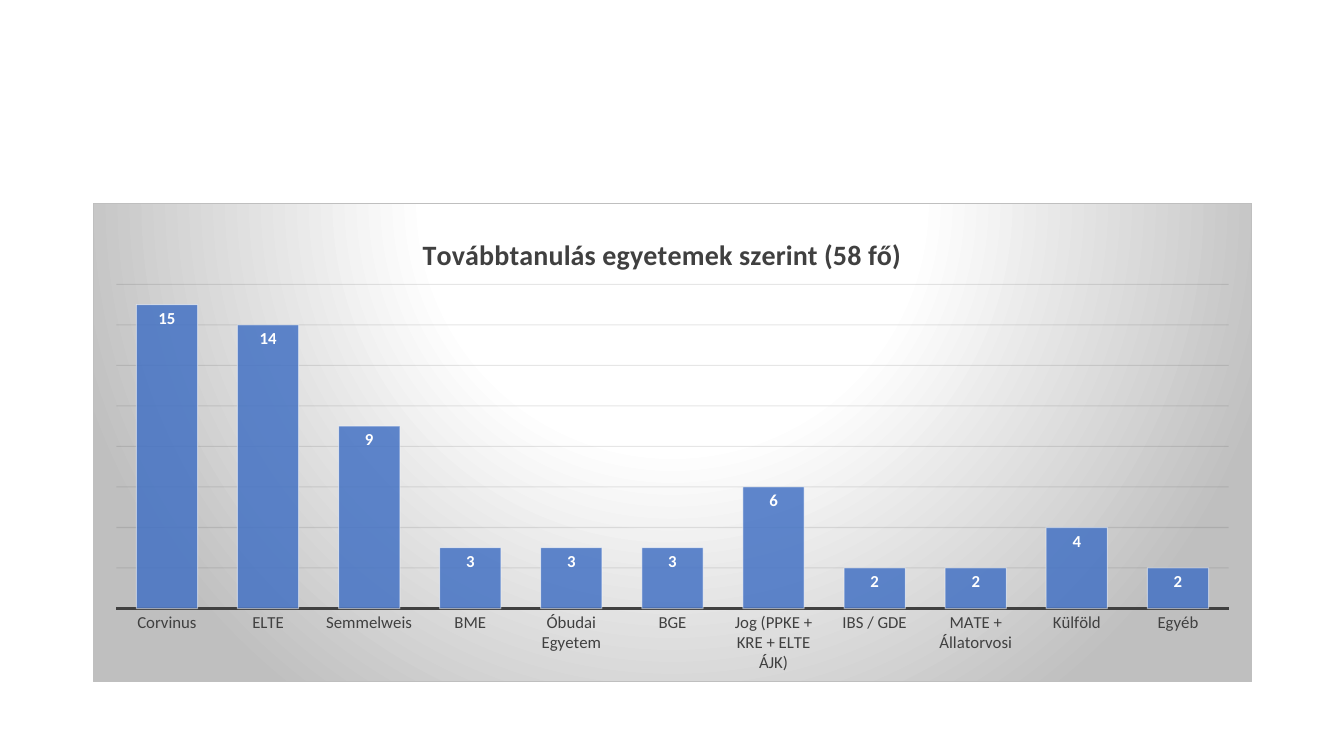
from lxml import etree
from pptx import Presentation
from pptx.chart.data import CategoryChartData
from pptx.dml.color import RGBColor
from pptx.enum.chart import XL_CHART_TYPE, XL_LABEL_POSITION, XL_TICK_MARK
from pptx.oxml import parse_xml
from pptx.oxml.ns import nsdecls, qn
from pptx.util import Inches, Pt

TITLE = "Továbbtanulás egyetemek szerint (58 fő)"
STUDENTS = {
    "Corvinus": 15,
    "ELTE": 14,
    "Semmelweis": 9,
    "BME": 3,
    "Óbudai Egyetem": 3,
    "BGE": 3,
    "Jog (PPKE + KRE + ELTE ÁJK)": 6,
    "IBS / GDE": 2,
    "MATE + Állatorvosi": 2,
    "Külföld": 4,
    "Egyéb": 2,
}

FONT = "Calibri"
BLACK = RGBColor(0x00, 0x00, 0x00)
WHITE = RGBColor(0xFF, 0xFF, 0xFF)
DARK_GRAY = RGBColor(0x40, 0x40, 0x40)
GRID = RGBColor(0x0D, 0x0D, 0x0D)
SILVER = RGBColor(0xBF, 0xBF, 0xBF)
BLUE = RGBColor(0x44, 0x72, 0xC4)
COLUMN = XL_CHART_TYPE.COLUMN_CLUSTERED
INSIDE_END = XL_LABEL_POSITION.INSIDE_END
NO_TICK = XL_TICK_MARK.NONE


def style_font(font, size, color, bold=False):
    font.name = FONT
    font.size = Pt(size)
    font.bold = bold
    font.color.rgb = color


def style_line(line, color, width):
    line.color.rgb = color
    line.width = Pt(width)


def set_opacity(fill, percent):
    """Make a solid fill or line colour partly transparent."""
    color = fill._xPr.find(qn("a:solidFill"))[0]
    etree.SubElement(color, qn("a:alpha"), val=str(percent * 1000))


def set_layout(parent, index, **settings):
    """Place a chart part by fractions of the chart's size."""
    for layout in parent.findall(qn("c:layout")):
        parent.remove(layout)
    layout = parent.makeelement(qn("c:layout"))
    manual = etree.SubElement(layout, qn("c:manualLayout"))
    for name, value in settings.items():
        etree.SubElement(manual, qn("c:" + name), val=str(value))
    parent.insert(index, layout)


def set_background(chart):
    """Give the chart area a radial gradient and a thin border."""
    stops = "".join(
        f'<a:gs pos="{position * 1000}"><a:srgbClr val="{color}"/></a:gs>'
        for position, color in ((0, WHITE), (39, WHITE), (100, SILVER)))
    chart._chartSpace.find(qn("c:chart")).addnext(parse_xml(
        f'<c:spPr {nsdecls("c", "a")}>'
        f'<a:gradFill><a:gsLst>{stops}</a:gsLst><a:path path="circle">'
        '<a:fillToRect l="50000" t="-80000" r="50000" b="180000"/></a:path></a:gradFill>'
        f'<a:ln w="{Pt(0.75)}"><a:solidFill><a:srgbClr val="{SILVER}"/></a:solidFill></a:ln>'
        '</c:spPr>'))


presentation = Presentation()
presentation.slide_width = Inches(13.33)
presentation.slide_height = Inches(7.5)
slide = presentation.slides.add_slide(presentation.slide_layouts[6])

chart_data = CategoryChartData()
chart_data.categories = list(STUDENTS)
chart_data.add_series("Series 1", list(STUDENTS.values()))
chart = slide.shapes.add_chart(
    COLUMN, Inches(0.92), Inches(2.01), Inches(11.5), Inches(4.76), chart_data).chart
style_font(chart.font, 10, BLACK)
chart.has_legend = False
set_background(chart)

chart.has_title = True
title_run = chart.chart_title.text_frame.paragraphs[0].add_run()
title_run.text = TITLE
style_font(title_run.font, 20, DARK_GRAY, bold=True)
set_layout(chart.chart_title._element, 1,
           xMode="edge", yMode="edge", x=0.28, y=0.055)
set_layout(chart._chartSpace.chart.plotArea, 0, layoutTarget="inner",
           xMode="edge", yMode="edge", x=0.02, y=0.17, w=0.96, h=0.677)

category_axis = chart.category_axis
category_axis.major_tick_mark = NO_TICK
category_axis.minor_tick_mark = NO_TICK
style_font(category_axis.tick_labels.font, 12, DARK_GRAY)
style_line(category_axis.format.line, DARK_GRAY, 1.5)

value_axis = chart.value_axis
value_axis.visible = False
value_axis.minimum_scale = 0
value_axis.maximum_scale = 16
value_axis.major_unit = 2
value_axis.has_major_gridlines = True
grid_line = value_axis.major_gridlines.format.line
style_line(grid_line, GRID, 0.75)
set_opacity(grid_line.fill, 10)

plot = chart.plots[0]
plot.gap_width = 65
plot.vary_by_categories = False
series = plot.series[0]
series.format.fill.solid()
series.format.fill.fore_color.rgb = BLUE
set_opacity(series.format.fill, 85)
style_line(series.format.line, WHITE, 0.75)
set_opacity(series.format.line.fill, 50)

labels = series.data_labels
labels.show_value = True
labels.position = INSIDE_END
style_font(labels.font, 12, WHITE, bold=True)

presentation.save("out.pptx")
